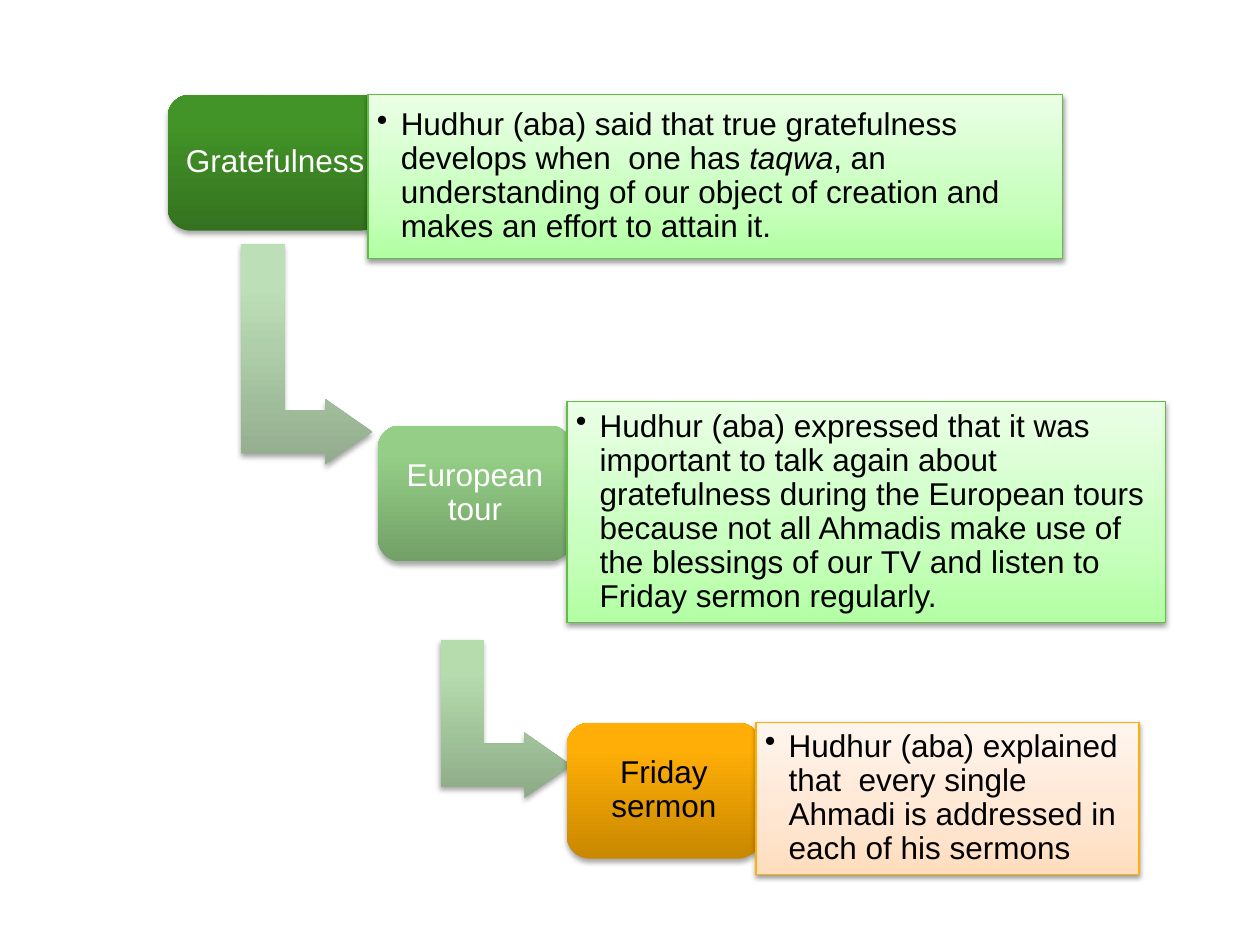
from lxml import etree
from pptx import Presentation
from pptx.dml.color import RGBColor
from pptx.enum.shapes import MSO_SHAPE as Shape
from pptx.enum.text import MSO_ANCHOR as Anchor, PP_ALIGN as Align
from pptx.oxml import parse_xml
from pptx.oxml.ns import nsdecls, qn
from pptx.util import Cm, Pt

GREEN_PANEL = [(0, "B2FFA3"), (35, "C8FFBE"), (100, "EAFFE6")]
ORANGE_PANEL = [(0, "FFDDBD"), (35, "FFE6D1"), (100, "FFF5EE")]


def add_block(kind, place, stops, outline=None, rotation=0):
    block = page.shapes.add_shape(kind, *[Cm(length) for length in place])
    block.rotation = rotation
    if outline:
        block.line.color.rgb = RGBColor.from_string(outline)
        block.line.width = Pt(0.75)
    else:
        block.line.fill.background()
    marks = "".join(
        f'<a:gs pos="{stop * 1000}"><a:srgbClr val="{color}"/></a:gs>' for stop, color in stops
    )
    line = block._element.spPr.find(qn("a:ln"))
    line.addprevious(parse_xml(
        f'<a:gradFill {nsdecls("a")} rotWithShape="{0 if rotation else 1}">'
        f'<a:gsLst>{marks}</a:gsLst><a:lin ang="16200000" scaled="0"/></a:gradFill>'
    ))
    distance, alpha = (20000, 38000) if outline else (23000, 35000)
    line.addnext(parse_xml(
        f'<a:effectLst {nsdecls("a")}><a:outerShdw blurRad="40000" dist="{distance}" '
        f'dir="5400000" rotWithShape="0"><a:srgbClr val="000000"><a:alpha val="{alpha}"/>'
        f'</a:srgbClr></a:outerShdw></a:effectLst>'
    ))
    return block


def write_text(block, runs, color, align, space_after):
    frame = block.text_frame
    frame.word_wrap = True
    frame.vertical_anchor = Anchor.MIDDLE
    frame.margin_left = frame.margin_right = Cm(0.18)
    frame.margin_top = frame.margin_bottom = Cm(0.18)
    para = frame.paragraphs[0]
    para.alignment = align
    para.line_spacing = 0.9
    para.space_after = Pt(space_after)
    for text, italic in runs:
        span = para.add_run()
        span.text = text
        span.font.name = "Arial"
        span.font.size = Pt(18)
        span.font.italic = italic
        span.font.color.rgb = RGBColor.from_string(color)
    return para


deck = Presentation()
deck.slide_width, deck.slide_height = Cm(25.4), Cm(19.05)
page = deck.slides.add_slide(deck.slide_layouts[6])

steps = [
    {
        "arrow": (3.96, 5.82, 4.45, 2.64),
        "arrow_stops": [(0, "92AC8D"), (80, "BDDFB7"), (100, "BDE1B7")],
        "title": "Gratefulness",
        "title_color": "FFFFFF",
        "title_place": (3.38, 1.91, 4.34, 2.74),
        "title_stops": [(0, "34721F"), (80, "439428"), (100, "429726")],
        "panel_place": (7.42, 1.91, 14, 3.3),
        "panel_stops": GREEN_PANEL,
        "outline": "62BC45",
        "runs": [
            ("Hudhur (aba) said that true gratefulness develops when  one has ", False),
            ("taqwa", True),
            (", an understanding of our object of creation and makes an effort to attain it.", False),
        ],
    },
    {
        "arrow": (8.61, 13.18, 3.18, 2.64),
        "arrow_stops": [(0, "8CAA86"), (80, "B6DCAE"), (100, "B6DEAE")],
        "title": "European tour",
        "title_color": "FFFFFF",
        "title_place": (7.62, 8.58, 3.91, 2.74),
        "title_stops": [(0, "73A068"), (80, "95CF87"), (100, "95D286")],
        "panel_place": (11.43, 8.1, 12.07, 4.45),
        "panel_stops": GREEN_PANEL,
        "outline": "62BC45",
        "runs": [
            ("Hudhur (aba) expressed that it was important to talk again about gratefulness "
             "during the European tours because not all Ahmadis make use of the blessings of "
             "our TV and listen to Friday sermon regularly.", False),
        ],
    },
    {
        "arrow": None,
        "title": "Friday sermon",
        "title_color": "000000",
        "title_place": (11.43, 14.57, 3.91, 2.74),
        "title_stops": [(0, "C98800"), (80, "FFAE07"), (100, "FFAF08")],
        "panel_place": (15.24, 14.56, 7.72, 3.07),
        "panel_stops": ORANGE_PANEL,
        "outline": "FFAF09",
        "runs": [
            ("Hudhur (aba) explained that  every single Ahmadi is addressed in each of his sermons",
             False),
        ],
    },
]

for step in steps:
    if step["arrow"]:
        arrow = add_block(Shape.BENT_UP_ARROW, step["arrow"], step["arrow_stops"], rotation=90)
        for index, value in enumerate((0.33, 0.25, 0.36)):
            arrow.adjustments[index] = value

    title = add_block(Shape.ROUNDED_RECTANGLE, step["title_place"], step["title_stops"])
    write_text(title, [(step["title"], False)], step["title_color"], Align.CENTER, 6.3)

    panel = add_block(Shape.RECTANGLE, step["panel_place"], step["panel_stops"], step["outline"])
    para = write_text(panel, step["runs"], "000000", Align.LEFT, 2.7)
    para.level = 1
    properties = para._p.get_or_add_pPr()
    properties.set("marL", str(Cm(0.48)))
    properties.set("indent", str(-Cm(0.48)))
    etree.SubElement(properties, qn("a:buChar")).set("char", "•")

deck.save("out.pptx")
